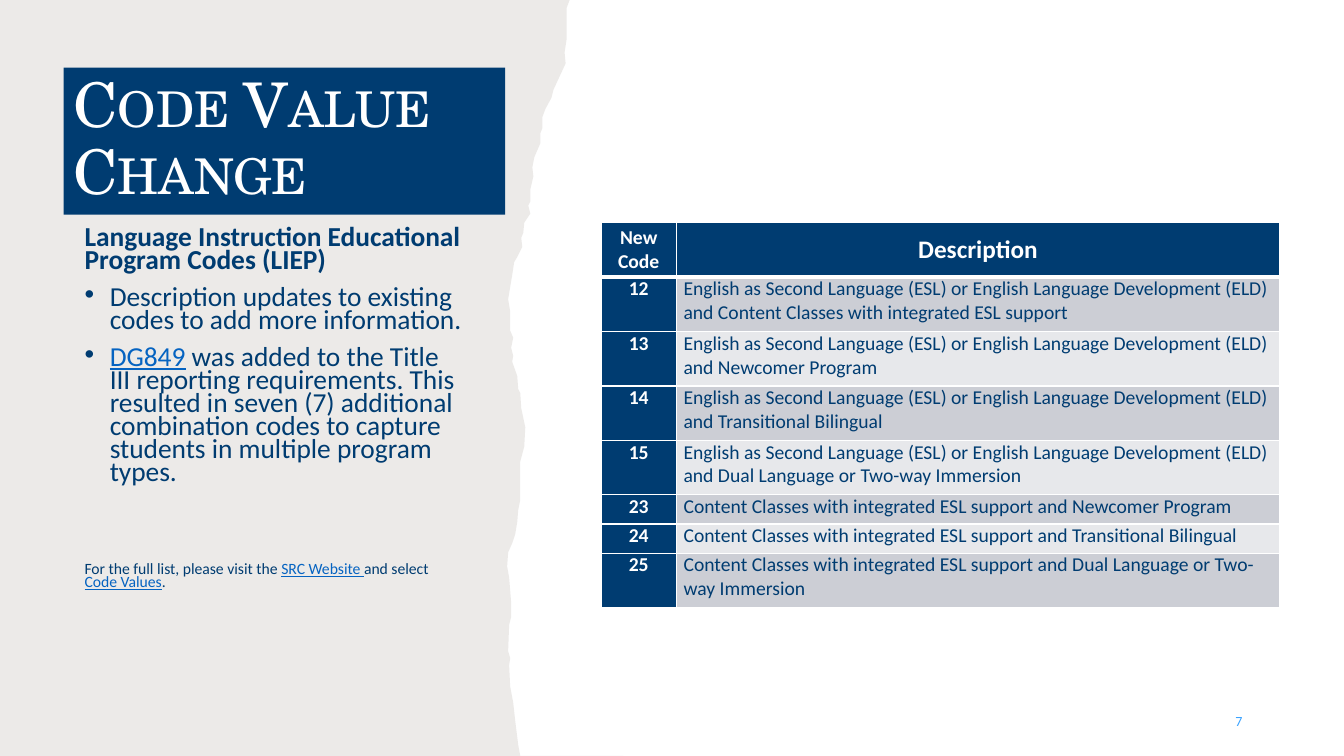
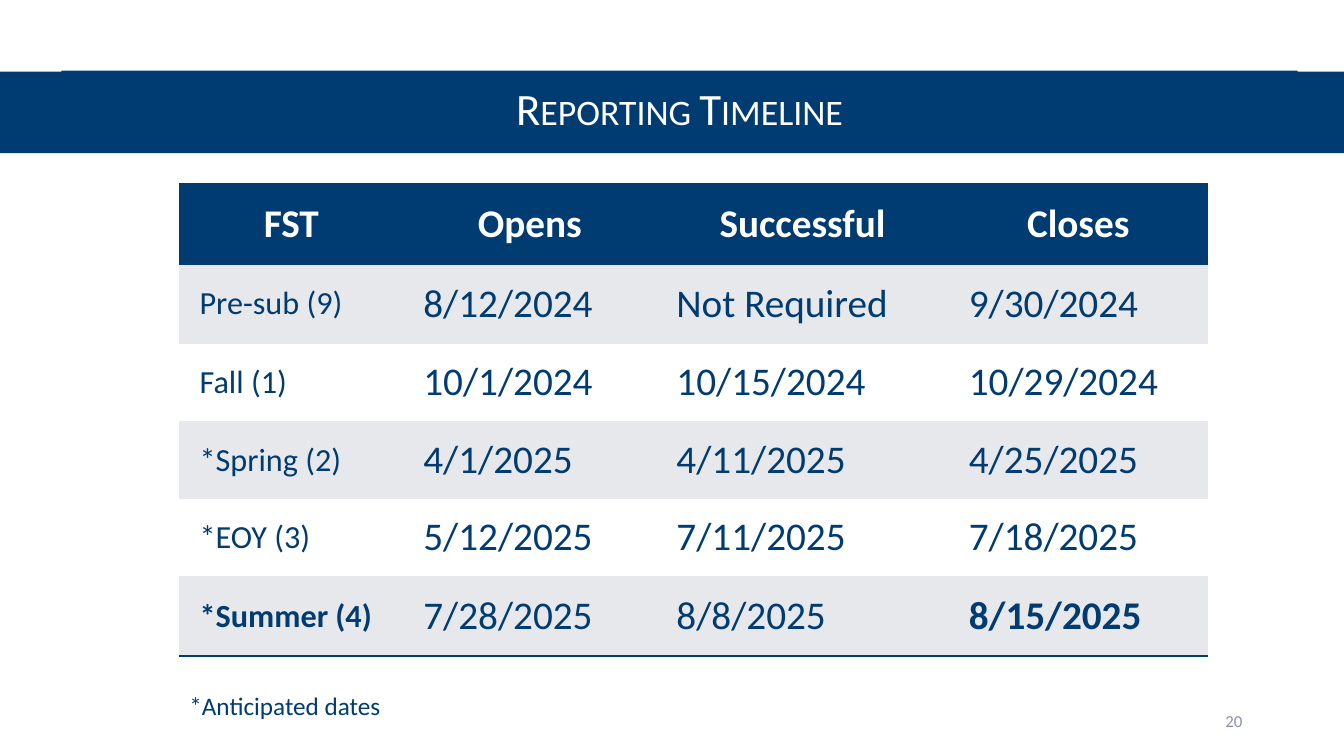
"""Build a code value change slide and a reporting timeline slide."""
from lxml import etree
from pptx import Presentation
from pptx.dml.color import RGBColor
from pptx.enum.shapes import MSO_SHAPE
from pptx.enum.text import MSO_ANCHOR, PP_ALIGN
from pptx.oxml.ns import qn
from pptx.util import Inches, Pt

RECTANGLE = MSO_SHAPE.RECTANGLE
TOP, MIDDLE = MSO_ANCHOR.TOP, MSO_ANCHOR.MIDDLE
LEFT, CENTER, RIGHT = PP_ALIGN.LEFT, PP_ALIGN.CENTER, PP_ALIGN.RIGHT

COLORS = {
    "navy": "003C71",
    "white": "FFFFFF",
    "link": "0563C1",
    "paper": "82766A",
    "band_dark": "CCCED5",
    "band_light": "E7E8EB",
    "bright_blue": "39A2FF",
    "gray": "8C92A5",
}
BODY_FONT = "Calibri"
TITLE_FONT = "TeX Gyre Schola"
PLAIN_TABLE_STYLE = "{2D5ABB26-0587-4C30-8999-92F81FD0307C}"

TORN_EDGE = [
    (5.65, 0), (5.62, 0.08), (5.62, 0.39), (5.6, 0.52), (5.61, 0.63),
    (5.55, 0.76), (5.49, 0.89), (5.47, 0.97), (5.41, 1.08), (5.38, 1.16),
    (5.38, 1.27), (5.36, 1.32), (5.36, 1.42), (5.3, 1.56), (5.28, 1.66),
    (5.29, 1.75), (5.26, 1.88), (5.26, 2), (5.24, 2.04), (5.26, 2.12),
    (5.2, 2.21), (5.19, 2.31), (5.17, 2.36), (5.18, 2.45), (5.13, 2.55),
    (5.1, 2.6), (5.08, 2.73), (5.06, 2.85), (5.04, 2.97), (5.06, 3.09),
    (5.06, 3.28), (5.09, 3.35), (5.07, 3.45), (5.09, 3.53), (5.08, 3.59),
    (5.13, 3.73), (5.14, 3.86), (5.16, 3.9), (5.17, 4.05), (5.21, 4.24),
    (5.2, 4.43), (5.16, 4.58), (5.16, 4.96), (5.14, 5.06), (5.13, 5.18),
    (5.11, 5.3), (5.08, 5.39), (5.04, 5.48), (5.03, 5.62), (5.05, 5.73),
    (5.07, 5.98), (5.07, 6.12), (5.05, 6.2), (5.04, 6.46), (5.06, 6.53),
    (5.05, 6.6), (5.06, 6.81), (5.09, 6.97), (5.11, 7.15), (5.14, 7.39),
    (5.16, 7.5), (6.18, 7.5),
]

ESL_ELD = "English as Second Language (ESL) or English Language Development (ELD) and "
CONTENT = "Content Classes with integrated ESL support"
PROGRAM_CODES = [
    ("12", ESL_ELD + CONTENT),
    ("13", ESL_ELD + "Newcomer Program"),
    ("14", ESL_ELD + "Transitional Bilingual"),
    ("15", ESL_ELD + "Dual Language or Two-way Immersion"),
    ("23", CONTENT + " and Newcomer Program"),
    ("24", CONTENT + " and Transitional Bilingual"),
    ("25", CONTENT + " and Dual Language or Two-way Immersion"),
]
TIMELINE_HEADER = ["FST", "Opens", "Successful", "Closes"]
TIMELINE = [
    ["Pre-sub (9)", "8/12/2024", "Not Required", "9/30/2024"],
    ["Fall (1)", "10/1/2024", "10/15/2024", "10/29/2024"],
    ["*Spring (2)", "4/1/2025", "4/11/2025", "4/25/2025"],
    ["*EOY (3)", "5/12/2025", "7/11/2025", "7/18/2025"],
    ["*Summer (4)", "7/28/2025", "8/8/2025", "8/15/2025"],
]
BOLD_DATES = {"*Summer (4)", "8/15/2025"}


def color(name):
    """Return a named colour."""
    return RGBColor.from_string(COLORS[name])


def add_run(paragraph, text, size, color_name="navy", bold=False,
            font=BODY_FONT, underline=False, small_caps=False):
    """Append one formatted run to a paragraph."""
    run = paragraph.add_run()
    run.text = text
    run.font.name = font
    run.font.size = Pt(size)
    run.font.bold = bold
    run.font.color.rgb = color(color_name)
    if underline:
        run.font.underline = True
    if small_caps:
        run.font._element.set("cap", "small")


def format_paragraph(paragraph, align=LEFT, line=1.0, before=0, after=0):
    """Set the alignment and spacing of a paragraph."""
    paragraph.alignment = align
    paragraph.line_spacing = line
    paragraph.space_before = Pt(before)
    paragraph.space_after = Pt(after)


def add_bullet(paragraph):
    """Give a paragraph a navy bullet with a hanging indent."""
    properties = paragraph._p.get_or_add_pPr()
    properties.set("marL", str(Inches(0.25)))
    properties.set("indent", str(-Inches(0.25)))
    bullet_color = etree.SubElement(properties, qn("a:buClr"))
    etree.SubElement(bullet_color, qn("a:srgbClr"), val=COLORS["navy"])
    etree.SubElement(properties, qn("a:buFont"), typeface="Arial")
    etree.SubElement(properties, qn("a:buChar"), char="•")


def fill_shape(shape, color_name):
    """Give a shape a flat fill without line or shadow."""
    shape.shadow.inherit = False
    shape.fill.solid()
    shape.fill.fore_color.rgb = color(color_name)
    shape.line.fill.background()


def add_band(slide, left, top, width, height):
    """Add a navy rectangle."""
    band = slide.shapes.add_shape(
        RECTANGLE, Inches(left), Inches(top), Inches(width), Inches(height))
    fill_shape(band, "navy")
    return band


def add_title(slide, text, box, size, font, align):
    """Add a white small-caps title on a navy band."""
    frame = add_band(slide, *box).text_frame
    frame.word_wrap = True
    frame.vertical_anchor = MIDDLE
    paragraph = frame.paragraphs[0]
    format_paragraph(paragraph, align, line=0.9)
    add_run(paragraph, text, size, "white", font=font, small_caps=True)


def add_text_box(slide, left, top, width, height, anchor=TOP):
    """Add a wrapping text box and return its text frame."""
    box = slide.shapes.add_textbox(
        Inches(left), Inches(top), Inches(width), Inches(height))
    box.text_frame.word_wrap = True
    box.text_frame.vertical_anchor = anchor
    return box.text_frame


def add_slide_number(slide, number, size, color_name):
    """Add the slide number at the bottom right."""
    paragraph = add_text_box(slide, 9.42, 6.95, 3, 0.4, MIDDLE).paragraphs[0]
    format_paragraph(paragraph, RIGHT, after=6)
    add_run(paragraph, number, size, color_name)


def add_torn_panel(slide):
    """Add the translucent paper panel with a torn right edge."""
    points = [(Inches(x), Inches(y)) for x, y in TORN_EDGE + [(0, 7.5)]]
    builder = slide.shapes.build_freeform(0, 0)
    builder.add_line_segments(points, close=True)
    panel = builder.convert_to_shape()
    fill_shape(panel, "paper")
    paper_color = panel._element.spPr.find(qn("a:solidFill"))[0]
    etree.SubElement(paper_color, qn("a:alpha"), val="15000")


def add_table(slide, left, top, widths, heights):
    """Add an unstyled table with the given column widths and row heights."""
    frame = slide.shapes.add_table(
        len(heights), len(widths), Inches(left), Inches(top),
        Inches(sum(widths)), Inches(sum(heights)))
    table = frame.table
    table.first_row = table.horz_banding = False
    table._tbl.tblPr.find(qn("a:tableStyleId")).text = PLAIN_TABLE_STYLE
    for column, width in zip(table.columns, widths):
        column.width = Inches(width)
    for row, height in zip(table.rows, heights):
        row.height = Inches(height)
    return table


def style_cell(cell, fill, margins, anchor, borders):
    """Set borders, fill, margins and anchor; borders map a side to colour and width."""
    properties = cell._tc.get_or_add_tcPr()
    for side in "LRTB":
        if side in borders:
            color_name, width = borders[side]
            line = etree.SubElement(properties, qn("a:ln" + side), w=str(Pt(width)))
            line_fill = etree.SubElement(line, qn("a:solidFill"))
            etree.SubElement(line_fill, qn("a:srgbClr"), val=COLORS[color_name])
    cell.fill.solid()
    cell.fill.fore_color.rgb = color(fill)
    cell.margin_left = cell.margin_right = Inches(margins[0])
    cell.margin_top = cell.margin_bottom = Inches(margins[1])
    cell.vertical_anchor = anchor


def write_cell(cell, text, size, color_name, bold, align, spacing=0):
    """Write one formatted paragraph in a table cell."""
    paragraph = cell.text_frame.paragraphs[0]
    format_paragraph(paragraph, align, before=spacing, after=spacing)
    add_run(paragraph, text, size, color_name, bold)


def add_code_table(slide):
    """Add the table of new program codes."""
    heights = [0.54] * 5 + [0.29] * 2 + [0.54]
    table = add_table(slide, 5.96, 2.21, [0.75, 5.98], heights)
    for row, texts in enumerate([("New Code", "Description")] + PROGRAM_CODES):
        header = row == 0
        band = "band_dark" if row % 2 else "band_light"
        borders = {side: ("white", 1) for side in "LRTB"}
        if row < 2:
            borders["B" if header else "T"] = ("white", 3)
        for column, text in enumerate(texts):
            strong = header or column == 0
            cell = table.cell(row, column)
            style_cell(cell, "navy" if strong else band, (0.07, 0),
                       MIDDLE if header else TOP, borders)
            write_cell(cell, text, 18 if header and column else 14,
                       "white" if strong else "navy", strong,
                       CENTER if strong else LEFT, spacing=2 * column)


def add_timeline_table(slide):
    """Add the table of reporting dates."""
    heights = [0.79, 0.79, 0.77, 0.77, 0.77, 0.79]
    table = add_table(slide, 1.78, 1.83, [2.22, 2.51, 2.9, 2.57], heights)
    rule = ("navy", 2)
    for row, texts in enumerate([TIMELINE_HEADER] + TIMELINE):
        header = row == 0
        borders = {"T": rule, "B": rule} if header else {}
        if row == len(TIMELINE):
            borders = {"B": rule}
        fill = "navy" if header else "band_light" if row % 2 else "white"
        for column, text in enumerate(texts):
            cell = table.cell(row, column)
            style_cell(cell, fill, (0.2, 0.1), MIDDLE, borders)
            write_cell(cell, text, 28 if header or column else 23,
                       "white" if header else "navy",
                       header or text in BOLD_DATES, CENTER if header else LEFT)


def add_code_notes(slide):
    """Add the explanation beside the code table."""
    frame = add_text_box(slide, 0.74, 2.21, 3.95, 4.74)
    heading = frame.paragraphs[0]
    updates, added, footnote = [frame.add_paragraph() for _ in range(3)]
    for paragraph in (heading, updates, added):
        format_paragraph(paragraph, line=0.7, before=10)
    format_paragraph(footnote, line=0.7, before=56)
    add_bullet(updates)
    add_bullet(added)
    add_run(heading, "Language Instruction Educational Program Codes (LIEP)", 19.6, bold=True)
    add_run(updates, "Description updates to existing codes to add more information.", 19.6)
    add_run(added, "DG849", 19.6, "link", underline=True)
    add_run(added, " was added to the Title III reporting requirements. This resulted in "
            "seven (7) additional combination codes to capture students in multiple "
            "program types.", 19.6)
    add_run(footnote, "For the full list, please visit the ", 11.2)
    add_run(footnote, "SRC Website ", 11.2, "link", underline=True)
    add_run(footnote, "and select ", 11.2)
    add_run(footnote, "Code Values", 11.2, "link", underline=True)
    add_run(footnote, ".", 11.2)


def build_code_slide(slide):
    """Build the code value change slide."""
    add_torn_panel(slide)
    add_title(slide, "Code Value Change", (0.63, 0.67, 4.38, 1.46), 44, TITLE_FONT, LEFT)
    add_code_notes(slide)
    add_slide_number(slide, "7", 10, "bright_blue")
    add_code_table(slide)


def build_timeline_slide(slide):
    """Build the reporting timeline slide."""
    add_band(slide, 0, 0.71, 13.33, 0.81)
    add_title(slide, "Reporting Timeline", (0.61, 0.7, 12.26, 0.81), 32, BODY_FONT, CENTER)
    add_slide_number(slide, "20", 12, "gray")
    add_timeline_table(slide)
    note = add_text_box(slide, 1.78, 6.8, 3.74, 0.4).paragraphs[0]
    add_run(note, "*Anticipated dates", 18)


def main():
    """Create and save the presentation."""
    presentation = Presentation()
    presentation.slide_width = Inches(13.33)
    presentation.slide_height = Inches(7.5)
    blank = presentation.slide_layouts[6]
    for build in (build_code_slide, build_timeline_slide):
        build(presentation.slides.add_slide(blank))
    presentation.save("out.pptx")


if __name__ == "__main__":
    main()
